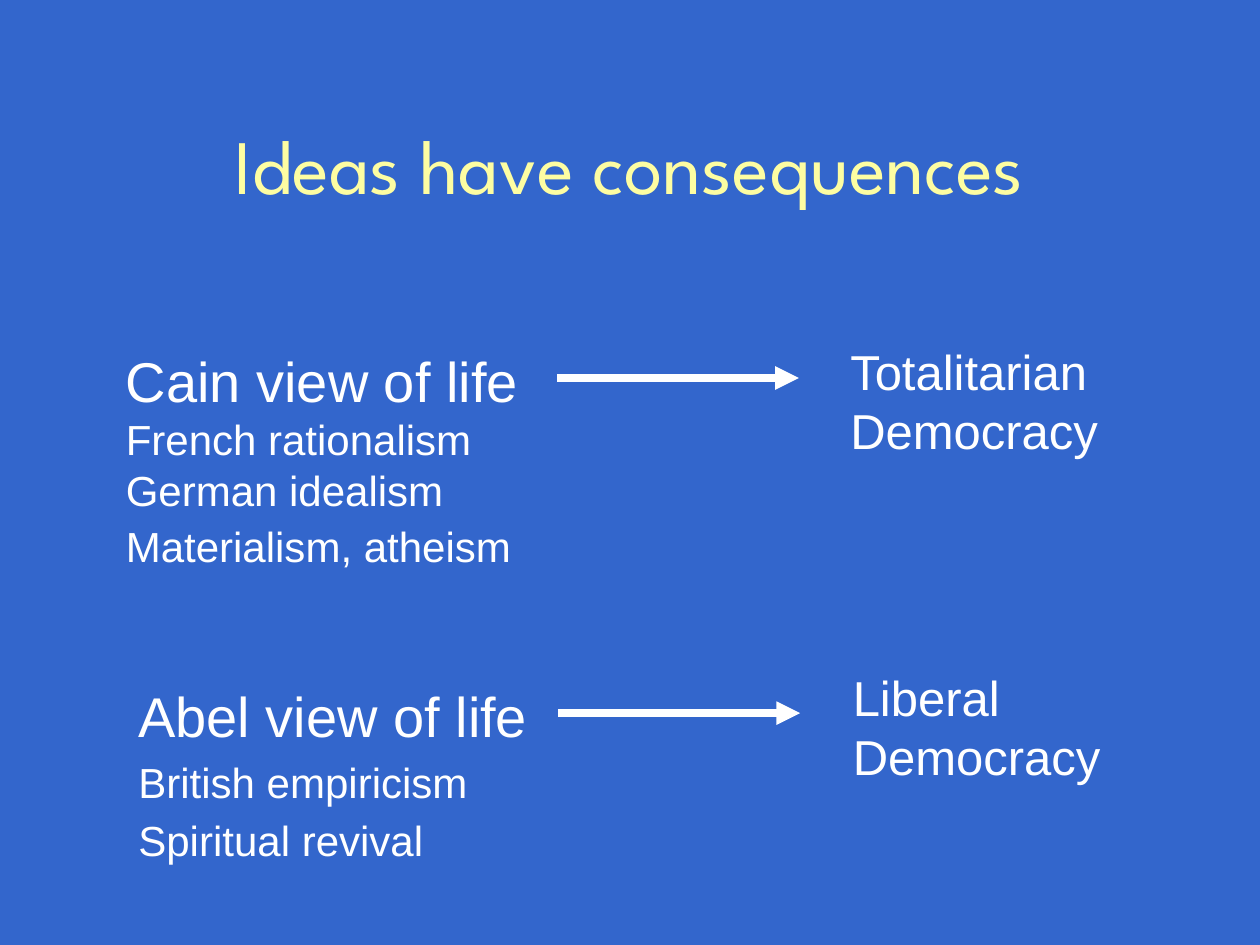
import pptx
import pptx.dml.color
import pptx.enum.shapes
import pptx.enum.text
import pptx.oxml
import pptx.oxml.ns
import pptx.util

WIDTH, HEIGHT = 10, 7.5
BLUE, YELLOW, WHITE = "3366CC", "FDFDA2", "FFFFFF"
HEADING, DETAIL, OUTCOME = 32, 24, 28
inch = pptx.util.Inches


def color(value):
    return pptx.dml.color.RGBColor.from_string(value)


def add_run(p, text, size, font="Arial", fill=WHITE):
    r = p.add_run()
    r.text = text
    r.font.size = pptx.util.Pt(size)
    r.font.name = font
    r.font.color.rgb = color(fill)


def add_text(s, box, lines, align="LEFT", anchor="TOP", wrap=False, **fmt):
    """Each line is (text, size) or (text, size, paragraph settings)."""
    tf = s.shapes.add_textbox(*map(inch, box)).text_frame
    tf.word_wrap = wrap
    tf.vertical_anchor = pptx.enum.text.MSO_ANCHOR[anchor]
    if not wrap:
        tf.auto_size = pptx.enum.text.MSO_AUTO_SIZE.SHAPE_TO_FIT_TEXT
    for i, (text, size, *settings) in enumerate(lines):
        p = tf.add_paragraph() if i else tf.paragraphs[0]
        p.alignment = pptx.enum.text.PP_ALIGN[align]
        for name, value in (settings[0] if settings else {}).items():
            setattr(p, name, value)
        add_run(p, text, size, **fmt)
    return tf


def add_arrow(s, x, y, length):
    sp = s.shapes.add_connector(pptx.enum.shapes.MSO_CONNECTOR.STRAIGHT,
                                *map(inch, (x, y, x + length, y)))
    sp.line.color.rgb = color(WHITE)
    sp.line.width = pptx.util.Pt(4.5)
    ln = sp.line._get_or_add_ln()
    ln.append(pptx.oxml.parse_xml(
        f'<a:tailEnd {pptx.oxml.ns.nsdecls("a")} type="triangle"/>'))
    sp._element.spPr.append(pptx.oxml.parse_xml(
        f'<a:effectLst {pptx.oxml.ns.nsdecls("a")}/>'))


def main():
    prs = pptx.Presentation()
    prs.slide_width, prs.slide_height = inch(WIDTH), inch(HEIGHT)
    s = prs.slides.add_slide(prs.slide_layouts[6])
    s.background.fill.solid()
    s.background.fill.fore_color.rgb = color(BLUE)

    margin = 0.075 * WIDTH
    add_text(s, (margin, 0.67, WIDTH - 2 * margin, 1.25),
             [("Ideas have consequences", 44)], align="CENTER",
             anchor="MIDDLE", wrap=True, font="League Spartan", fill=YELLOW)

    cain = add_text(s, (0.9, 2.7, 3.38, 1.91), [
        ("Cain view of life", HEADING, {"space_before": pptx.util.Pt(6.4)}),
        ("French rationalism", DETAIL),
        ("German idealism", DETAIL),
        ("Materialism, atheism", DETAIL, {"line_spacing": 0.9})])
    add_run(cain.paragraphs[-1], " ", HEADING)

    loose = {"line_spacing": 1.15}
    add_text(s, (1, 5.36, 3.29, 1.55), [
        ("Abel view of life", HEADING),
        ("British empiricism", DETAIL, loose),
        ("Spiritual revival", DETAIL, loose)])

    for x, y in ((4.42, 3), (4.43, 5.66)):
        add_arrow(s, x, y, 1.92)

    for kind, x, y, width in (("Totalitarian", 6.65, 2.66, 2.28),
                              ("Liberal", 6.67, 5.25, 2.17)):
        add_text(s, (x, y, width, 1.03),
                 [(kind, OUTCOME), ("Democracy", OUTCOME)])

    prs.save("out.pptx")


if __name__ == "__main__":
    main()
